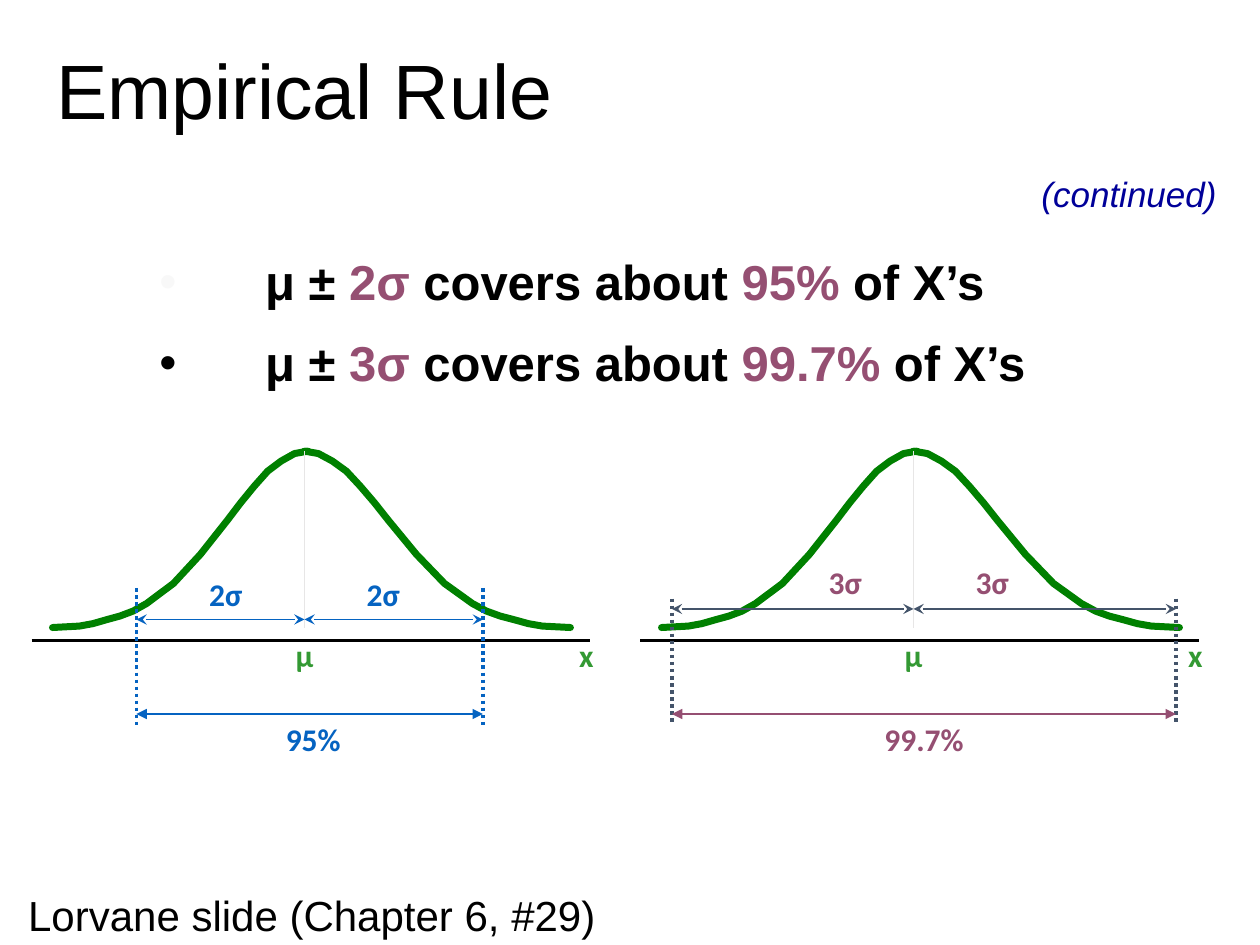
from dataclasses import dataclass

import pptx
import pptx.dml.color
import pptx.enum.dml
import pptx.enum.shapes
import pptx.enum.text
import pptx.oxml.ns
import pptx.util
from lxml import etree

Pt = pptx.util.Pt
ALIGN = pptx.enum.text.PP_ALIGN
COLOURS = {
    "black": "000000", "navy": "000099", "curve": "008000", "label": "339933",
    "blue": "0563C1", "plum": "954F72", "slate": "44546A", "centre": "E7E6E6",
    "pale": "F8F8F8",
}

# Steps from the tail (0) to the peak (19), with the height of the curve there
BELL = [(0, 358.6), (2, 357.8), (3, 356.4), (4, 354.2), (5, 352.1), (6, 349.2),
        (7, 344.9), (9, 333.4), (11, 316.8), (13, 297.4), (14, 287.3), (15, 277.9),
        (16, 269.3), (17, 263.5), (18, 259.2), (19, 257.8)]
BELL_STEPS = 19
AXIS_Y = 366
COVERAGE_Y = 408


@dataclass
class Run:
    text: str
    size: float
    colour: str
    font: str = "Arial"
    bold: bool = False
    italic: bool = False


@dataclass
class Panel:
    offset: float
    low: float
    high: float
    guide_top: float
    guide_bottom: float
    sigma_y: float
    sigma_text: str
    sigma_centres: tuple[float, float]
    sigma_label_top: float
    coverage: str
    coverage_centre: float
    line_colour: str
    text_colour: str


PANELS = [
    Panel(0, 78, 276, 336, 414, 354, "2σ", (129, 219), 325,
          "95%", 179, "blue", "blue"),
    Panel(348, 384, 672, 342, 414, 348, "3σ", (483, 567), 318,
          "99.7%", 528, "slate", "plum"),
]


def rgb(name: str) -> pptx.dml.color.RGBColor:
    return pptx.dml.color.RGBColor.from_string(COLOURS[name])


def add_child(parent, tag: str, **attributes: str):
    child = etree.SubElement(parent, pptx.oxml.ns.qn(tag))
    for key, value in attributes.items():
        child.set(key, value)
    return child


def add_run(paragraph, content: Run) -> None:
    run = paragraph.add_run()
    run.text = content.text
    run.font.name = content.font
    run.font.size = Pt(content.size)
    run.font.bold = content.bold
    run.font.italic = content.italic
    run.font.color.rgb = rgb(content.colour)


def add_text(slide, left: float, top: float, width: float, height: float,
             content: list[Run], align=ALIGN.LEFT, wrap: bool = False):
    frame = slide.shapes.add_textbox(Pt(left), Pt(top), Pt(width), Pt(height)).text_frame
    frame.word_wrap = wrap
    frame.paragraphs[0].alignment = align
    for run in content:
        add_run(frame.paragraphs[0], run)
    return frame


def add_label(slide, centre: float, top: float, width: float, text: str, colour: str) -> None:
    add_text(slide, centre - width / 2, top, width, 29,
             [Run(text, 18, colour, "Calibri", bold=True)], ALIGN.CENTER)


def add_line(slide, start: tuple[float, float], end: tuple[float, float], colour: str,
             width: float, dotted: bool = False, arrows: str = "") -> None:
    connector = slide.shapes.add_connector(
        pptx.enum.shapes.MSO_CONNECTOR.STRAIGHT, *map(Pt, start + end))
    connector.line.color.rgb = rgb(colour)
    connector.line.width = Pt(width)
    if dotted:
        connector.line.dash_style = pptx.enum.dml.MSO_LINE.ROUND_DOT
    if arrows:
        outline = connector.line._get_or_add_ln()
        add_child(outline, "a:headEnd", type=arrows)
        add_child(outline, "a:tailEnd", type=arrows)
    add_child(connector._element.spPr, "a:effectLst")


def add_half_bell(slide, tail_x: float, peak_x: float) -> None:
    step_width = (peak_x - tail_x) / BELL_STEPS
    points = [(Pt(tail_x + step * step_width), Pt(y)) for step, y in BELL]
    builder = slide.shapes.build_freeform(*points[0])
    builder.add_line_segments(points[1:], close=False)
    half = builder.convert_to_shape()
    half.shadow.inherit = False
    half.fill.background()
    half.line.color.rgb = rgb("curve")
    half.line.width = Pt(4)
    half.line._get_or_add_ln().set("cap", "rnd")


def add_panel(slide, panel: Panel) -> None:
    mean_x = panel.offset + 174

    # Bell curve, mean line and axis
    add_half_bell(slide, panel.offset + 326, mean_x)
    add_half_bell(slide, panel.offset + 30, panel.offset + 176)
    add_line(slide, (mean_x, 258), (mean_x, 358.6), "centre", 1)
    add_line(slide, (panel.offset + 18, AXIS_Y), (panel.offset + 337, AXIS_Y), "black", 1.5)
    add_label(slide, mean_x, 360, 30, "μ", "label")
    add_label(slide, panel.offset + 335, 360, 27, "x", "label")

    # Limits, sigma arrows and coverage arrow
    for limit in (panel.low, panel.high):
        add_line(slide, (limit, panel.guide_top), (limit, panel.guide_bottom),
                 panel.line_colour, 2, dotted=True)
    for start, end in ((mean_x, panel.high), (panel.low, mean_x)):
        add_line(slide, (start, panel.sigma_y), (end, panel.sigma_y),
                 panel.line_colour, 1, arrows="stealth")
    for centre in panel.sigma_centres:
        add_label(slide, centre, panel.sigma_label_top, 44,
                  panel.sigma_text, panel.text_colour)
    add_line(slide, (panel.low, COVERAGE_Y), (panel.high, COVERAGE_Y),
             panel.text_colour, 1.5, arrows="triangle")
    add_label(slide, panel.coverage_centre, COVERAGE_Y, 60,
              panel.coverage, panel.text_colour)


def add_rules(slide) -> None:
    frame = add_text(slide, 84, 144, 546, 112, [], wrap=True)
    rules = [("2σ ", "95% ", "pale"), ("3σ ", "99.7% ", "black")]
    for index, (spread, share, bullet_colour) in enumerate(rules):
        paragraph = frame.add_paragraph() if index else frame.paragraphs[0]
        paragraph.line_spacing = 0.9
        if index:
            paragraph.space_before = Pt(16)
        properties = paragraph._p.get_or_add_pPr()
        properties.set("marL", str(Pt(60.5)))
        properties.set("indent", str(-Pt(60.5)))
        bullet = add_child(properties, "a:buClr")
        add_child(bullet, "a:srgbClr", val=COLOURS[bullet_colour])
        add_child(properties, "a:buFont", typeface="Arial")
        add_child(properties, "a:buChar", char="•")
        for text, colour in (("μ ± ", "black"), (spread, "plum"),
                             ("covers about ", "black"), (share, "plum"),
                             ("of X’s", "black")):
            add_run(paragraph, Run(text, 28, colour, bold=True))


def main() -> None:
    deck = pptx.Presentation()
    deck.slide_width, deck.slide_height = Pt(720), Pt(540)
    slide = deck.slides.add_slide(deck.slide_layouts[6])

    # Title and statements
    title = add_text(slide, 25, 18, 534, 72, [Run("Empirical Rule", 44, "black")], wrap=True)
    title.vertical_anchor = pptx.enum.text.MSO_ANCHOR.MIDDLE
    title.paragraphs[0].line_spacing = 0.9
    add_text(slide, 588, 95, 120, 31,
             [Run("(continued)", 20, "navy", italic=True)], wrap=True)
    add_rules(slide)

    # Distributions
    for panel in PANELS:
        add_panel(slide, panel)

    # Source line
    add_text(slide, 9, 505, 345, 36, [Run("Lorvane slide (Chapter 6, #29)", 24, "black")])
    deck.save("out.pptx")


if __name__ == "__main__":
    main()
